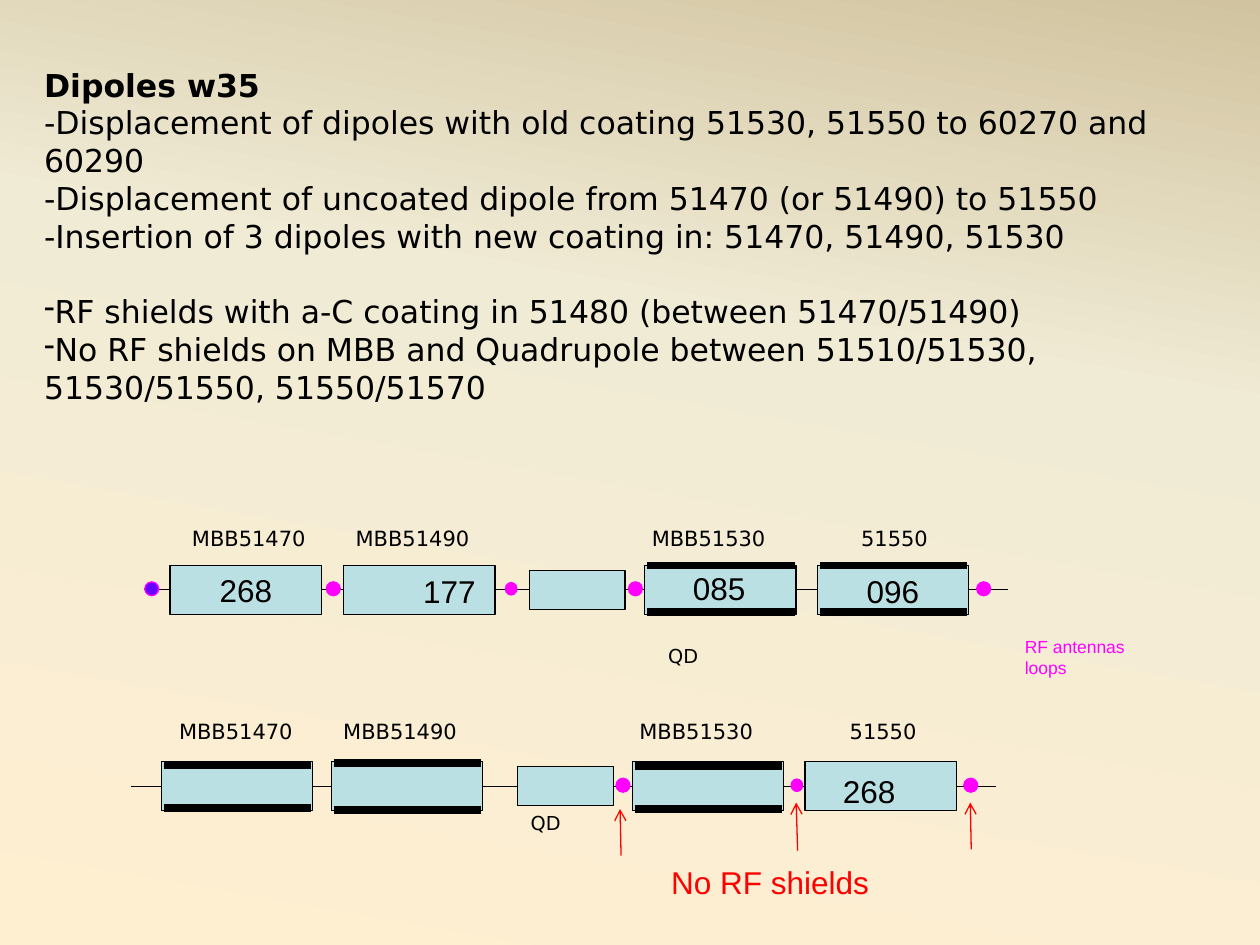
from lxml import etree
from pptx import Presentation
from pptx.dml.color import RGBColor
from pptx.enum.shapes import MSO_CONNECTOR, MSO_SHAPE
from pptx.enum.text import MSO_ANCHOR, PP_ALIGN
from pptx.oxml import parse_xml
from pptx.oxml.ns import nsdecls, qn
from pptx.util import Cm, Pt

COLORS = {
    "black": "000000", "dipole": "BBE0E3", "loop": "FF00FF",
    "first_loop": "6600FF", "red": "FF0000",
    "cream": "FFEFD1", "ivory": "F0EBD5", "sand": "D1C39F",
}
SANS, ARIAL = "DejaVu Sans", "Arial"
DIPOLE_SIZE, QUADRUPOLE_SIZE = (3.05, 0.99), (1.93, 0.79)
LOOP_SIZE, SMALL_LOOP_SIZE = (0.28, 0.28), (0.23, 0.25)
COATING_INSET, COATING_LENGTH = 0.05, 2.97

NOTES = [
    ("Dipoles w35", {"bold": True}, False, 0),
    ("-Displacement of dipoles with old coating 51530, 51550 to 60270 and 60290", {}, False, 0),
    ("-Displacement of uncoated dipole from 51470 (or 51490) to 51550", {}, False, 0),
    ("-Insertion of 3 dipoles with new coating in: 51470, 51490, 51530", {}, False, 0),
    ("RF shields with a-C coating in 51480 (between 51470/51490)", {}, True, 21.5),
    ("No RF shields on MBB and Quadrupole between 51510/51530, 51530/51550, 51550/51570",
     {}, True, 0),
]

ROWS = [
    {
        "beam": (2.9, 20.32, 11.89), "label_rise": 1.38, "quadrupole": 10.67,
        "dipoles": [(3.43, None, "268"), (6.93, None, ""),
                    (13.0, (0.49, 0.45), ""), (16.48, (0.49, 0.45), "")],
        "labels": [(3.71, "MBB51470"), (7.01, "MBB51490"),
                   (12.98, "MBB51530"), (17.2, "51550")],
        "loops": [(2.92, LOOP_SIZE, "first_loop"), (6.58, LOOP_SIZE, "loop"),
                  (10.19, SMALL_LOOP_SIZE, "loop"), (12.67, LOOP_SIZE, "loop"),
                  (19.69, LOOP_SIZE, "loop")],
        "numbers": [(8.28, 0.49, "177"), (13.72, 0.54, "085"), (17.22, 0.49, "096")],
        "quadrupole_label": (13.31, 12.9),
    },
    {
        "beam": (2.64, 20.07, 15.85), "label_rise": 1.45, "quadrupole": 10.44,
        "dipoles": [(3.25, (0.43, 0.43), ""), (6.68, (0.46, 0.48), ""),
                    (12.75, (0.41, 0.46), ""), (16.23, None, "")],
        "labels": [(3.45, "MBB51470"), (6.76, "MBB51490"),
                   (12.73, "MBB51530"), (16.97, "51550")],
        "loops": [(12.42, LOOP_SIZE, "loop"), (15.95, SMALL_LOOP_SIZE, "loop"),
                  (19.43, LOOP_SIZE, "loop")],
        "numbers": [(16.74, 0.41, "268")],
        "quadrupole_label": (10.54, 16.28),
    },
]
SHIELD_ARROWS = [((12.52, 17.25), (12.5, 16.31)),
                 ((16.08, 17.15), (16.05, 16.18)),
                 ((19.58, 17.12), (19.56, 16.18))]


def rgb(name):
    return RGBColor.from_string(COLORS[name])


def set_attributes(target, values):
    for name, value in values.items():
        setattr(target, name, value)


def format_font(font, name, size, color="black", **extra):
    set_attributes(font, {"name": name, "size": Pt(size), **extra})
    font.color.rgb = rgb(color)


def set_background(slide):
    stops = "".join(
        f'<a:gs pos="{position}"><a:srgbClr val="{COLORS[name]}"/></a:gs>'
        for position, name in ((0, "cream"), (65000, "ivory"), (100000, "sand")))
    fill = slide.background.fill
    fill.gradient()
    gradient = slide.element.find(".//" + qn("a:gradFill"))
    gradient.getparent().replace(gradient, parse_xml(
        f'<a:gradFill {nsdecls("a")} rotWithShape="1"><a:gsLst>{stops}</a:gsLst>'
        '<a:lin ang="16800000" scaled="0"/></a:gradFill>'))


def add_text_box(slide, left, top, width, height, wrap=True, tight=False):
    box = slide.shapes.add_textbox(Cm(left), Cm(top), Cm(width), Cm(height))
    box.text_frame.word_wrap = wrap
    if tight:
        set_attributes(box.text_frame, {
            "margin_left": Cm(0.16), "margin_right": Cm(0.16),
            "margin_top": Cm(0.08), "margin_bottom": Cm(0.08)})
    return box.text_frame


def add_label(slide, box, text, font_name, size, color="black", **options):
    frame = add_text_box(slide, *box, **options)
    frame.text = text
    for paragraph in frame.paragraphs:
        format_font(paragraph.font, font_name, size, color)


def add_notes_text(slide):
    frame = add_text_box(slide, 0.64, 1.2, 24.76, 7.95)
    for index, (text, style, bulleted, space) in enumerate(NOTES):
        paragraph = frame.paragraphs[0] if index == 0 else frame.add_paragraph()
        if bulleted:
            properties = paragraph._p.get_or_add_pPr()
            etree.SubElement(properties, qn("a:buChar")).set("char", "-")
        if space:
            paragraph.space_before = Pt(space)
        paragraph.text = text
        format_font(paragraph.font, SANS, 18, **style)


def add_element(slide, kind, left, top, size, fill, line="black"):
    width, height = size
    shape = slide.shapes.add_shape(kind, Cm(left), Cm(top), Cm(width), Cm(height))
    shape.shadow.inherit = False
    shape.fill.solid()
    shape.fill.fore_color.rgb = rgb(fill)
    shape.line.color.rgb = rgb(line)
    shape.line.width = Pt(0.75)
    return shape


def add_line(slide, start, end, color="black", width=0.75, arrow=False):
    connector = slide.shapes.add_connector(
        MSO_CONNECTOR.STRAIGHT, *(Cm(value) for value in (*start, *end)))
    connector.line.color.rgb = rgb(color)
    connector.line.width = Pt(width)
    if arrow:
        line = connector.line._get_or_add_ln()
        etree.SubElement(line, qn("a:tailEnd")).set("type", "arrow")
    etree.SubElement(connector._element.spPr, qn("a:effectLst"))


def add_dipole(slide, left, beam_y, coating, number):
    shape = add_element(slide, MSO_SHAPE.RECTANGLE, left, beam_y - DIPOLE_SIZE[1] / 2,
                        DIPOLE_SIZE, "dipole")
    if number:
        shape.text_frame.text = number
        shape.text_frame.vertical_anchor = MSO_ANCHOR.MIDDLE
        paragraph = shape.text_frame.paragraphs[0]
        paragraph.alignment = PP_ALIGN.CENTER
        format_font(paragraph.font, ARIAL, 18)
    if coating:
        above, below = coating
        start = left + COATING_INSET
        for y in (beam_y - above, beam_y + below):
            add_line(slide, (start, y), (start + COATING_LENGTH, y), width=4.5)


def add_row(slide, row):
    beam_start, beam_end, beam_y = row["beam"]
    add_line(slide, (beam_start, beam_y), (beam_end, beam_y))
    add_element(slide, MSO_SHAPE.RECTANGLE, row["quadrupole"],
                beam_y - QUADRUPOLE_SIZE[1] / 2, QUADRUPOLE_SIZE, "dipole")
    for left, coating, number in row["dipoles"]:
        add_dipole(slide, left, beam_y, coating, number)
    for left, size, fill in row["loops"]:
        add_element(slide, MSO_SHAPE.OVAL, left, beam_y - size[1] / 2 - 0.02,
                    size, fill, "loop")
    for left, text in row["labels"]:
        add_label(slide, (left, beam_y - row["label_rise"], 3, 1.04), text,
                  SANS, 12, tight=True)
    for left, rise, text in row["numbers"]:
        add_label(slide, (left, beam_y - rise, 1.57, 1.02), text, ARIAL, 18, wrap=False)
    add_label(slide, (*row["quadrupole_label"], 1.68, 1.14), "QD", SANS, 11, tight=True)


def main():
    presentation = Presentation()
    set_attributes(presentation, {"slide_width": Cm(25.4), "slide_height": Cm(19.05)})
    slide = presentation.slides.add_slide(presentation.slide_layouts[6])
    set_background(slide)
    add_notes_text(slide)
    for row in ROWS:
        add_row(slide, row)
    add_label(slide, (20.5, 12.75, 4.17, 1.04), "RF antennas\nloops", ARIAL, 10,
              "loop", tight=True)
    for start, end in SHIELD_ARROWS:
        add_line(slide, start, end, "red", arrow=True)
    add_label(slide, (13.28, 17.27, 4.72, 1.02), "No RF shields", ARIAL, 18,
              "red", wrap=False)
    presentation.save("out.pptx")


if __name__ == "__main__":
    main()
